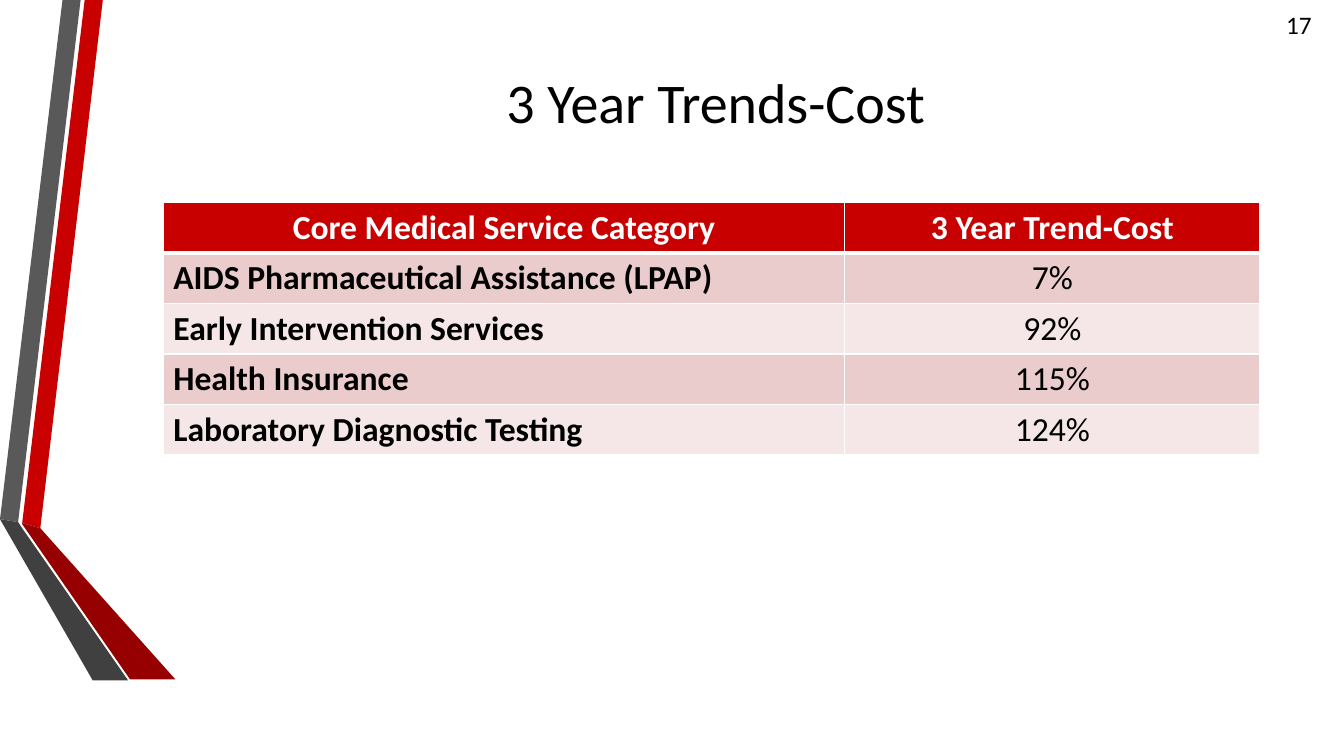
from lxml.etree import SubElement
from pptx import Presentation
from pptx.dml.color import RGBColor
from pptx.enum.text import MSO_ANCHOR, PP_ALIGN
from pptx.oxml.ns import qn
from pptx.util import Inches, Pt

BLACK = RGBColor(0x00, 0x00, 0x00)
WHITE = RGBColor(0xFF, 0xFF, 0xFF)
RED = RGBColor(0xC8, 0x00, 0x00)
MAROON = RGBColor(0x96, 0x00, 0x00)
GRAY = RGBColor(0x59, 0x59, 0x59)
CHARCOAL = RGBColor(0x40, 0x40, 0x40)
ROSE = RGBColor(0xEB, 0xCC, 0xCC)
BLUSH = RGBColor(0xF5, 0xE7, 0xE7)

# Points are percentages of the slide's width and height.
RIBBONS = [
    (RED, [(1.65, 69.2), (3, 69.87), (7.65, 0), (6.3, 0)]),
    (GRAY, [(6, 0), (4.65, 0), (0, 68.67), (1.35, 69.07)]),
    (MAROON, [(1.65, 69.33), (9.68, 89.87), (13.05, 89.87),
              (3, 69.87), (1.65, 69.2)]),
    (CHARCOAL, [(9.53, 90), (1.65, 69.87), (1.35, 69.07),
                (0, 68.67), (6.9, 90)]),
]
TRENDS = [
    ("Core Medical Service Category", "3 Year Trend-Cost"),
    ("AIDS Pharmaceutical Assistance (LPAP)", "7%"),
    ("Early Intervention Services", "92%"),
    ("Health Insurance", "115%"),
    ("Laboratory Diagnostic Testing", "124%"),
]


def write(frame, text, size=24, color=BLACK, bold=False, align=PP_ALIGN.LEFT):
    para = frame.paragraphs[0]
    para.alignment = align
    run = para.add_run()
    run.text = text
    font = run.font
    font.name, font.size, font.bold = "Calibri", Pt(size), bold
    font.color.rgb = color


def edge(cell, **widths):
    """Draw white cell borders; keys are L, R, T, B and values are points."""
    props = cell._tc.get_or_add_tcPr()
    for place, side in enumerate("LRTB"):
        line = SubElement(props, qn(f"a:ln{side}"), w=str(Pt(widths[side])))
        fill = SubElement(line, qn("a:solidFill"))
        SubElement(fill, qn("a:srgbClr"), val=str(WHITE))
        props.insert(place, line)


class Page:
    """A slide whose lengths are percentages of its width and height."""

    def __init__(self, deck):
        self.wide, self.high = deck.slide_width, deck.slide_height
        self.slide = deck.slides.add_slide(deck.slide_layouts[5])
        self.shapes = self.slide.shapes

    def x(self, share):
        return round(self.wide * share / 100)

    def y(self, share):
        return round(self.high * share / 100)

    def box(self, left, top, width, height):
        return self.x(left), self.y(top), self.x(width), self.y(height)

    def title(self, text, *area):
        shape = self.shapes.title
        shape.left, shape.top, shape.width, shape.height = self.box(*area)
        shape.text_frame.vertical_anchor = MSO_ANCHOR.MIDDLE
        write(shape.text_frame, text, size=40, align=PP_ALIGN.CENTER)

    def label(self, text, *area, **style):
        frame = self.shapes.add_textbox(*self.box(*area)).text_frame
        frame.word_wrap = True
        write(frame, text, **style)

    def ribbon(self, color, points):
        first, *rest = [(self.x(x), self.y(y)) for x, y in points]
        pen = self.shapes.build_freeform(*first)
        pen.add_line_segments(rest, close=True)
        shape = pen.convert_to_shape()
        shape.shadow.inherit = False
        shape.fill.solid()
        shape.fill.fore_color.rgb = color
        shape.line.fill.background()

    def table(self, data, left, top, cols, row):
        area = self.box(left, top, sum(cols), row * len(data))
        grid = self.shapes.add_table(len(data), len(cols), *area).table
        for col, share in zip(grid.columns, cols):
            col.width = self.x(share)
        for r, texts in enumerate(data):
            head = r == 0
            shade = RED if head else (BLUSH, ROSE)[r % 2]
            for c, text in enumerate(texts):
                cell = grid.cell(r, c)
                cell.fill.solid()
                cell.fill.fore_color.rgb = shade
                edge(cell, L=1, R=1, T=3 if r == 1 else 1, B=3 if head else 1)
                write(cell.text_frame, text, bold=head or c == 0,
                      color=WHITE if head else BLACK,
                      align=PP_ALIGN.CENTER if head or c else PP_ALIGN.LEFT)


def main():
    deck = Presentation()
    deck.slide_width, deck.slide_height = Inches(13.33), Inches(7.5)
    page = Page(deck)
    for color, points in RIBBONS:
        page.ribbon(color, points)
    page.label("17", 94.95, 0.53, 5.05, 5.33, size=18)
    page.title("3 Year Trends-Cost", 12.15, 0.53, 82.2, 25.6)
    page.table(TRENDS, 12.15, 26.8, cols=(50.7, 30.9), row=6.67)
    deck.save("out.pptx")


if __name__ == "__main__":
    main()
